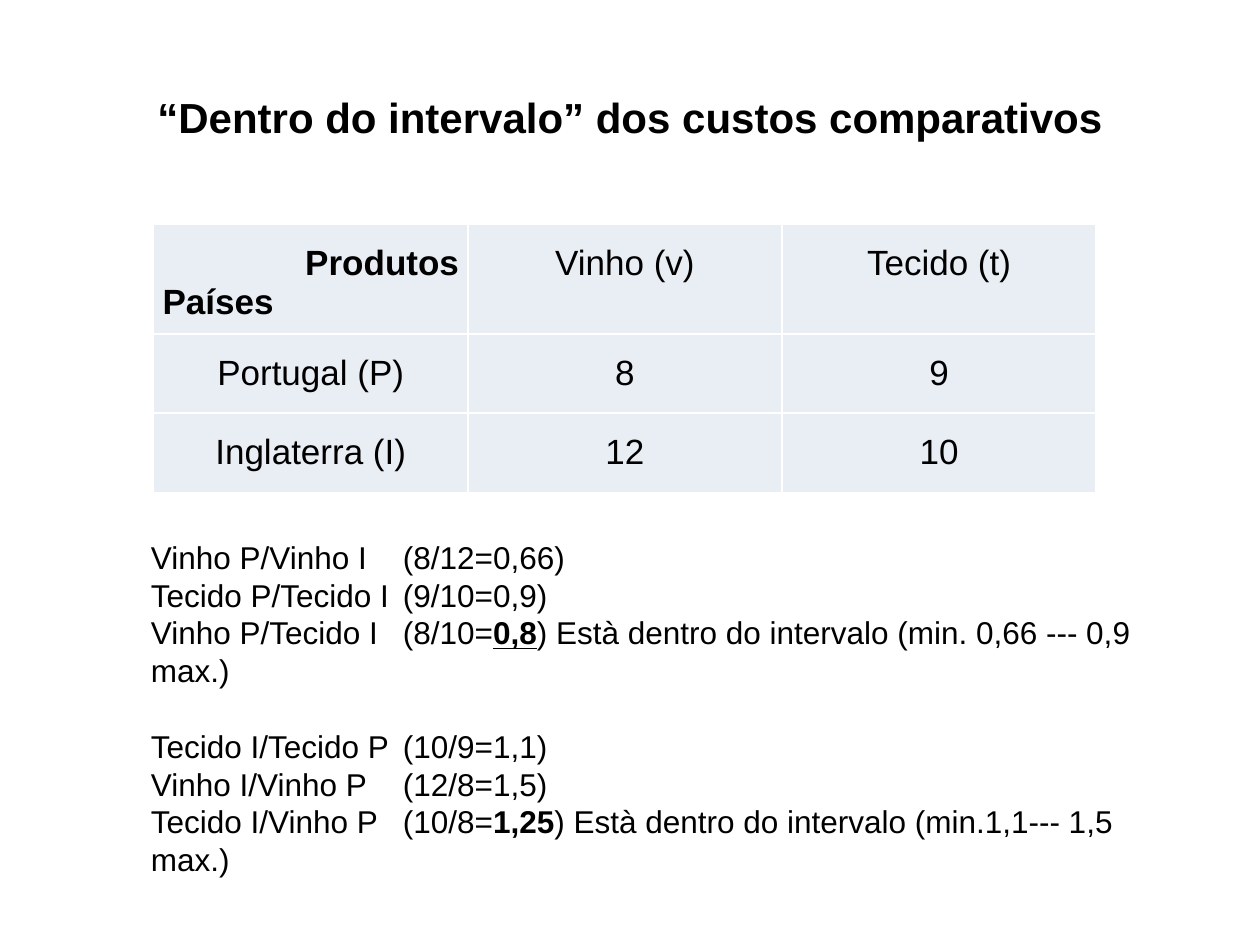
"""Build a slide that compares cost ratios between two countries."""
from dataclasses import dataclass

from lxml.etree import SubElement
from pptx import Presentation
from pptx.dml.color import RGBColor
from pptx.enum.text import MSO_ANCHOR as Anchor, PP_ALIGN as Align
from pptx.oxml.ns import qn
from pptx.util import Inches, Pt

INK, PALE, WHITE = "000000", "E9EDF4", "FFFFFF"
BODY = {"space_before": Pt(6), "space_after": Pt(6), "line_spacing": 1.5}
LINE = Pt(21.6)


@dataclass
class Ratio:
    """One ratio line, with its result and an optional remark."""
    name: str
    sum: str
    value: str
    note: str = ""
    under: bool = False
    gap: bool = False


GRID = [
    ["", "Vinho (v)", "Tecido (t)"],
    ["Portugal (P)", "8", "9"],
    ["Inglaterra (I)", "12", "10"],
]
RATIOS = [
    Ratio("Vinho P/Vinho I", "8/12", "0,66"),
    Ratio("Tecido P/Tecido I", "9/10", "0,9"),
    Ratio("Vinho P/Tecido I", "8/10", "0,8",
          " Està dentro do intervalo (min. 0,66 --- 0,9 max.)", under=True),
    Ratio("Tecido I/Tecido P", "10/9", "1,1", gap=True),
    Ratio("Vinho I/Vinho P", "12/8", "1,5"),
    Ratio("Tecido I/Vinho P", "10/8", "1,25",
          " Està dentro do intervalo (min.1,1--- 1,5 max.)"),
]


def tint(code: str) -> RGBColor:
    """Turn a hex string into a colour."""
    return RGBColor.from_string(code)


def style(item, values: dict) -> None:
    """Set every given attribute on an item."""
    for key, value in values.items():
        setattr(item, key, value)


def write(para, text: str, size: float, bold=False, under=False) -> None:
    """Add one run of text to a paragraph."""
    run = para.add_run()
    run.text = text
    style(run.font, {"name": "Arial", "size": Pt(size), "bold": bold, "underline": under})
    run.font.color.rgb = tint(INK)


def add_box(slide, left: float, top: float, width: float, height: float):
    """Add a wrapping text box and return its frame."""
    box = slide.shapes.add_textbox(Inches(left), Inches(top), Inches(width), Inches(height))
    box.text_frame.word_wrap = True
    return box.text_frame


def add_edges(cell) -> None:
    """Give a cell thin white borders."""
    props = cell._tc.get_or_add_tcPr()
    for spot, side in enumerate(("lnL", "lnR", "lnT", "lnB")):
        edge = SubElement(props, qn(f"a:{side}"), w=str(Pt(1)))
        fill = SubElement(edge, qn("a:solidFill"))
        SubElement(fill, qn("a:srgbClr"), val=WHITE)
        props.remove(edge)
        props.insert(spot, edge)


def add_title(slide) -> None:
    """Write the slide title."""
    frame = add_box(slide, 0.5, 0.3, 9, 1.25)
    frame.vertical_anchor = Anchor.MIDDLE
    para = frame.paragraphs[0]
    para.alignment = Align.CENTER
    write(para, "“Dentro do intervalo” dos custos comparativos", 24, True)


def add_grid(slide) -> None:
    """Draw the table of costs by country and product."""
    table = slide.shapes.add_table(
        3, 3, Inches(1.22), Inches(1.78), Inches(7.48), Inches(2.13)).table
    for row, high in zip(table.rows, (0.87, 0.63, 0.63)):
        row.height = Inches(high)
    for r, words in enumerate(GRID):
        for c, word in enumerate(words):
            cell = table.cell(r, c)
            style(cell, {"margin_left": Inches(0.07), "margin_right": Inches(0.07),
                         "margin_top": 0, "margin_bottom": 0})
            cell.fill.solid()
            cell.fill.fore_color.rgb = tint(PALE)
            add_edges(cell)
            if word:
                para = cell.text_frame.paragraphs[0]
                style(para, BODY | {"alignment": Align.CENTER})
                write(para, word, 20)
    frame = table.cell(0, 0).text_frame
    head = frame.paragraphs[0]
    style(head, BODY | {"alignment": Align.RIGHT, "space_after": Pt(0)})
    write(head, "Produtos", 20, True)
    write(frame.add_paragraph(), "Países", 20, True)


def add_ratios(slide) -> None:
    """List the cost ratios, one to a paragraph."""
    frame = add_box(slide, 1.1, 4.22, 8.23, 2.83)
    for i, ratio in enumerate(RATIOS):
        para = frame.add_paragraph() if i else frame.paragraphs[0]
        style(para, {"line_spacing": LINE, "space_before": LINE if ratio.gap else Pt(0)})
        write(para, f"{ratio.name} \t({ratio.sum}=", 18)
        write(para, ratio.value, 18, bool(ratio.note), ratio.under)
        write(para, f"){ratio.note}", 18)


def main() -> None:
    """Build and save the deck."""
    deck = Presentation()
    style(deck, {"slide_width": Inches(10), "slide_height": Inches(7.5)})
    slide = deck.slides.add_slide(deck.slide_layouts[6])
    add_title(slide)
    add_grid(slide)
    add_ratios(slide)
    deck.save("out.pptx")


if __name__ == "__main__":
    main()
